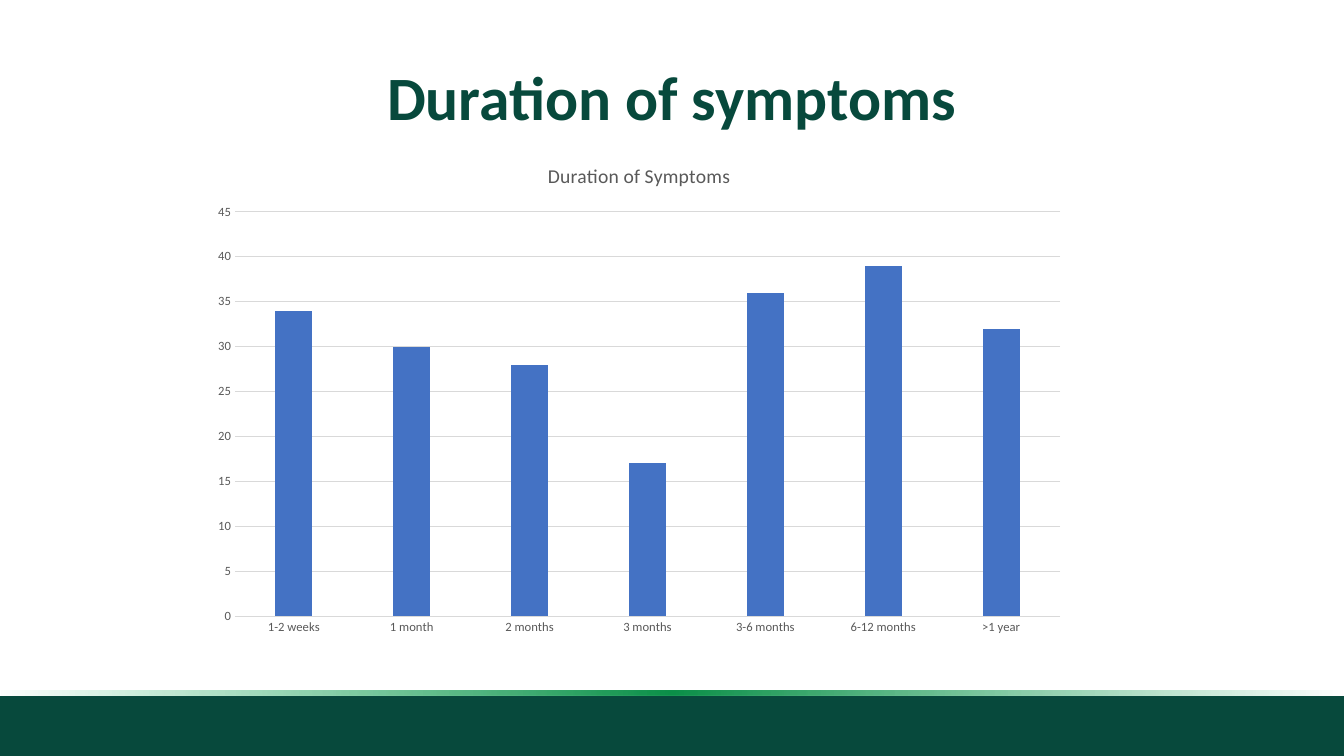
from lxml import etree
from pptx import Presentation
from pptx.chart.data import CategoryChartData
from pptx.dml.color import RGBColor
from pptx.enum.chart import XL_CHART_TYPE, XL_TICK_MARK
from pptx.enum.shapes import MSO_SHAPE
from pptx.enum.text import MSO_ANCHOR, PP_ALIGN
from pptx.oxml import parse_xml
from pptx.util import Pt

COLUMNS = XL_CHART_TYPE.COLUMN_CLUSTERED
NO_TICK = XL_TICK_MARK.NONE
RECTANGLE = MSO_SHAPE.RECTANGLE
MIDDLE = MSO_ANCHOR.MIDDLE
CENTER = PP_ALIGN.CENTER

TITLE = "Duration of symptoms"
CHART_TITLE = "Duration of Symptoms"
SERIES_NAME = "Series 1"
DURATIONS = {
    "1-2 weeks": 34,
    "1 month": 30,
    "2 months": 28,
    "3 months": 17,
    "3-6 months": 36,
    "6-12 months": 39,
    ">1 year": 32,
}

FONT = "Calibri"
COLORS = {
    "dark_green": "07493C",
    "bar": "4472C4",
    "grid": "D9D9D9",
    "label": "595959",
}
# position in percent, colour, opacity in percent
GLOW_STOPS = [(0, "0D9D4F", 0), (50, "0C9049", 100), (100, "0FAB56", 0)]

SLIDE_SIZE = (960, 540)
FOOTER_BOX = (0, 497.3, 960, 42.7)
GLOW_BOX = (0, 493, 960, 4)
TITLE_BOX = (66, 28.8, 828, 85.7)
CHART_BOX = (143.3, 102.2, 626.4, 358.6)

DRAWING_NS = "http://schemas.openxmlformats.org/drawingml/2006/main"


def color(name):
    return RGBColor.from_string(COLORS[name])


def points(values):
    return [Pt(value) for value in values]


def style_font(font, size, color_name, bold=False):
    font.name = FONT
    font.size = Pt(size)
    font.bold = bold
    font.color.rgb = color(color_name)


def style_line(line, color_name):
    line.color.rgb = color(color_name)
    line.width = Pt(0.75)


def add_band(slide, box):
    band = slide.shapes.add_shape(RECTANGLE, *points(box))
    band.shadow.inherit = False
    band.line.fill.background()
    band.fill.solid()
    band.fill.fore_color.rgb = color("dark_green")
    return band


def fade_band(band):
    """Fill the band with a gradient that is clear at both ends."""
    band.fill.gradient()
    band.fill.gradient_angle = 180
    stops = "".join(
        f'<a:gs pos="{position * 1000}"><a:srgbClr val="{value}">'
        f'<a:alpha val="{opacity * 1000}"/></a:srgbClr></a:gs>'
        for position, value, opacity in GLOW_STOPS
    )
    stop_list = parse_xml(f'<a:gsLst xmlns:a="{DRAWING_NS}">{stops}</a:gsLst>')
    old_list = next(band._element.spPr.iter(etree.QName(DRAWING_NS, "gsLst").text))
    old_list.getparent().replace(old_list, stop_list)


def add_title(slide):
    title = slide.shapes.title
    title.left, title.top, title.width, title.height = points(TITLE_BOX)
    title.text_frame.text = TITLE
    title.text_frame.word_wrap = True
    title.text_frame.vertical_anchor = MIDDLE
    para = title.text_frame.paragraphs[0]
    para.alignment = CENTER
    para.line_spacing = 0.9
    style_font(para.runs[0].font, 44, "dark_green", bold=True)


def add_duration_chart(slide):
    data = CategoryChartData()
    data.categories = list(DURATIONS)
    data.add_series(SERIES_NAME, list(DURATIONS.values()))
    chart = slide.shapes.add_chart(COLUMNS, *points(CHART_BOX), data).chart
    style_font(chart.font, 10, "label")
    chart.has_legend = False
    chart.has_title = True
    heading = chart.chart_title.text_frame
    heading.text = CHART_TITLE
    style_font(heading.paragraphs[0].runs[0].font, 14, "label")
    chart.chart_title.include_in_layout = False

    plot = chart.plots[0]
    plot.gap_width = 219
    plot.overlap = -27
    plot.vary_by_categories = False
    bars = plot.series[0].format.fill
    bars.solid()
    bars.fore_color.rgb = color("bar")

    for axis in (chart.category_axis, chart.value_axis):
        axis.major_tick_mark = NO_TICK
        axis.minor_tick_mark = NO_TICK
        style_font(axis.tick_labels.font, 9, "label")
    style_line(chart.category_axis.format.line, "grid")
    values = chart.value_axis
    values.minimum_scale, values.maximum_scale, values.major_unit = 0, 45, 5
    values.format.line.fill.background()
    values.has_major_gridlines = True
    style_line(values.major_gridlines.format.line, "grid")


def main():
    deck = Presentation()
    deck.slide_width, deck.slide_height = points(SLIDE_SIZE)
    slide = deck.slides.add_slide(deck.slide_layouts[5])
    add_band(slide, FOOTER_BOX)
    fade_band(add_band(slide, GLOW_BOX))
    add_title(slide)
    add_duration_chart(slide)
    deck.save("out.pptx")


if __name__ == "__main__":
    main()
